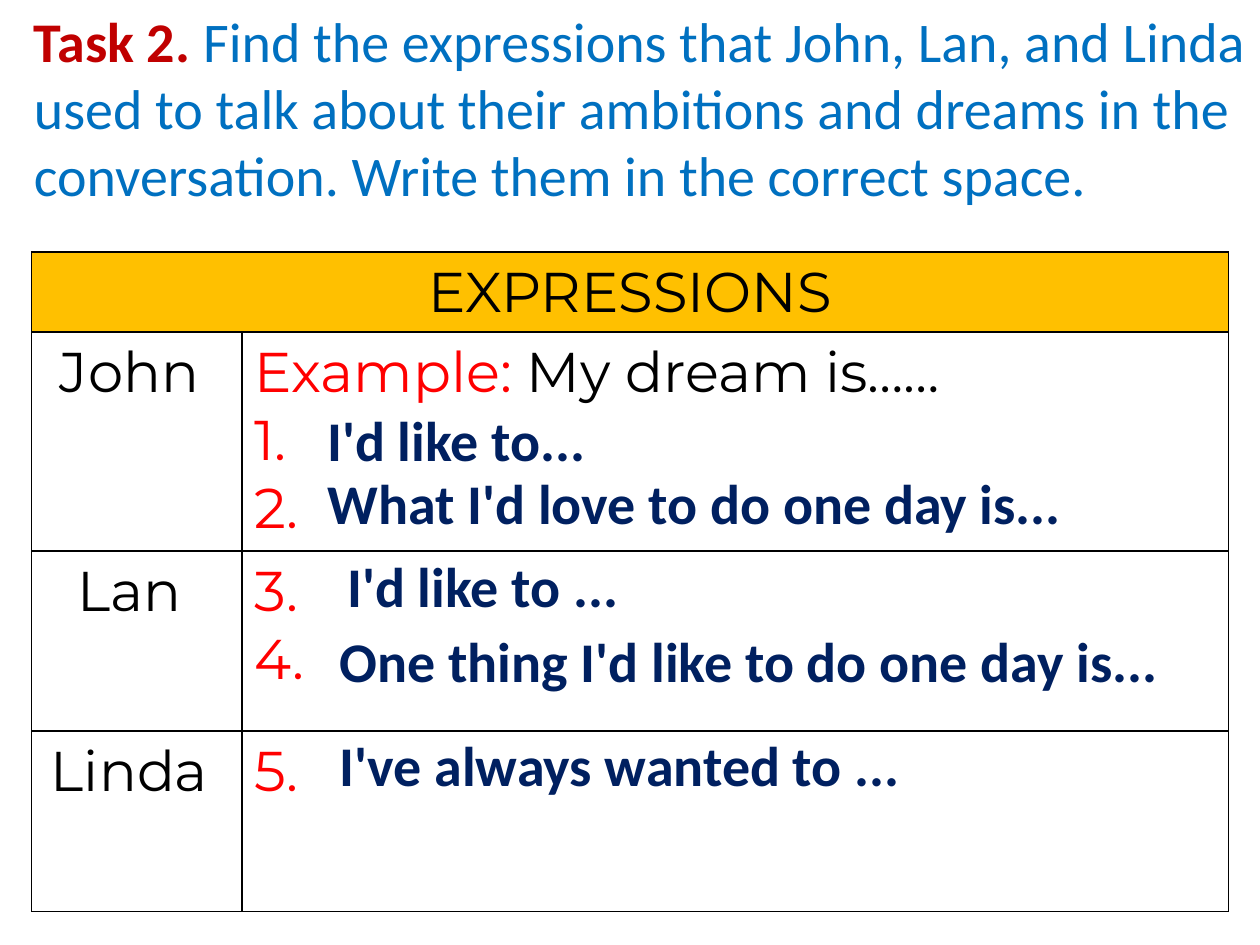
"""Build the Task 2 slide on expressions for ambitions and dreams."""
from typing import NamedTuple

from lxml.etree import SubElement
from pptx import Presentation
from pptx.dml.color import RGBColor as Rgb
from pptx.enum.text import MSO_ANCHOR as Anchor, MSO_AUTO_SIZE as AutoSize, PP_ALIGN as Align
from pptx.oxml.ns import qn
from pptx.util import Cm, Pt

COLORS = {"task": "C00000", "instruction": "0070C0", "header": "FFC000",
          "label": "000000", "number": "FF0000", "answer": "002060"}
FRAME_FORMAT = {"word_wrap": True, "auto_size": AutoSize.SHAPE_TO_FIT_TEXT,
                "vertical_anchor": Anchor.TOP}
BODY_FORMAT = {"size": Pt(32), "name": "Calibri", "bold": False}
STRONG_FORMAT = BODY_FORMAT | {"bold": True}
TABLE_FORMAT = BODY_FORMAT | {"name": "Montserrat"}
COLUMN_WIDTHS = (4.24, 19.89)
ROW_HEIGHTS = (1.6, 4.42, 3.63, 3.63)


class Piece(NamedTuple):
    text: str
    color: str


class Speaker(NamedTuple):
    name: str
    lines: tuple[tuple[Piece, ...], ...]


class Answer(NamedTuple):
    text: str
    left: float
    top: float
    width: float


def numbered(*numbers: int) -> tuple[tuple[Piece, ...], ...]:
    """Return one line for each answer number."""
    return tuple((Piece(f"{number}.", "number"),) for number in numbers)


SPEAKERS = (
    Speaker("John ", ((Piece("Example:", "number"), Piece(" My dream is……", "label")),
                      *numbered(1, 2))),
    Speaker("Lan ", numbered(3, 4)),
    Speaker("Linda ", numbered(5)),
)
ANSWERS = (
    Answer("I'd like to...", 6.35, 8.05, 6.4),
    Answer("What I'd love to do one day is...", 6.35, 9.32, 15.4),
    Answer("I'd like to ...", 6.75, 11, 6.2),
    Answer("One thing I'd like to do one day is...", 6.6, 12.5, 17.4),
    Answer("I've always wanted to ...", 6.6, 14.6, 12),
)


def apply_format(target, values: dict) -> None:
    """Set every format value on the target."""
    for attribute, value in values.items():
        setattr(target, attribute, value)


def write_piece(paragraph, piece: Piece, values: dict) -> None:
    """Add one coloured run to a paragraph."""
    run = paragraph.add_run()
    run.text = piece.text
    apply_format(run.font, values)
    run.font.color.rgb = Rgb.from_string(COLORS[piece.color])


def write_lines(frame, lines, align: Align = Align.LEFT) -> None:
    """Fill a table cell's frame with lines of pieces."""
    for index, line in enumerate(lines):
        paragraph = frame.add_paragraph() if index else frame.paragraphs[0]
        paragraph.alignment = align
        for piece in line:
            write_piece(paragraph, piece, TABLE_FORMAT)


def add_borders(cell) -> None:
    """Rule all four sides of a cell in black."""
    properties = cell._tc.get_or_add_tcPr()
    for index, side in enumerate(("lnL", "lnR", "lnT", "lnB")):
        border = SubElement(properties, qn(f"a:{side}"), w=str(Pt(1)))
        fill = SubElement(border, qn("a:solidFill"))
        SubElement(fill, qn("a:srgbClr"), val=COLORS["label"])
        properties.insert(index, border)


def write_task(title) -> None:
    """Place and fill the slide title."""
    apply_format(title, {"left": Cm(0.43), "top": Cm(0), "width": Cm(24.97), "height": Cm(4.37)})
    apply_format(title.text_frame, FRAME_FORMAT)
    paragraph = title.text_frame.paragraphs[0]
    paragraph.alignment = Align.LEFT
    write_piece(paragraph, Piece("Task 2. ", "task"), STRONG_FORMAT)
    instruction = ("Find the expressions that John, Lan, and Linda used to talk about their "
                   "ambitions and dreams in the conversation. Write them in the correct space.")
    write_piece(paragraph, Piece(instruction, "instruction"), BODY_FORMAT)


def add_expressions(slide) -> None:
    """Draw the table of speakers and their expressions."""
    expressions = slide.shapes.add_table(
        len(ROW_HEIGHTS), len(COLUMN_WIDTHS), Cm(0.64), Cm(5.08),
        Cm(sum(COLUMN_WIDTHS)), Cm(sum(ROW_HEIGHTS))).table
    apply_format(expressions, {"first_row": False, "horz_banding": False})
    for column, width in zip(expressions.columns, COLUMN_WIDTHS):
        column.width = Cm(width)
    for row, height in zip(expressions.rows, ROW_HEIGHTS):
        row.height = Cm(height)
    for cell in expressions.iter_cells():
        cell.fill.background()
        add_borders(cell)
    header = expressions.cell(0, 0)
    header.merge(expressions.cell(0, 1))
    header.fill.solid()
    header.fill.fore_color.rgb = Rgb.from_string(COLORS["header"])
    write_lines(header.text_frame, ((Piece("EXPRESSIONS", "label"),),), Align.CENTER)
    for row, speaker in enumerate(SPEAKERS, start=1):
        name_line = (Piece(speaker.name, "label"),)
        write_lines(expressions.cell(row, 0).text_frame, (name_line,), Align.CENTER)
        write_lines(expressions.cell(row, 1).text_frame, speaker.lines)


def add_answer(slide, answer: Answer) -> None:
    """Place one answer over its numbered line."""
    frame = slide.shapes.add_textbox(
        Cm(answer.left), Cm(answer.top), Cm(answer.width), Cm(1.62)).text_frame
    apply_format(frame, FRAME_FORMAT)
    write_piece(frame.paragraphs[0], Piece(answer.text, "answer"), STRONG_FORMAT)


def main() -> None:
    """Assemble and save the slide."""
    deck = Presentation()
    apply_format(deck, {"slide_width": Cm(25.4), "slide_height": Cm(19.05)})
    slide = deck.slides.add_slide(deck.slide_layouts.get_by_name("Title Only"))
    write_task(slide.shapes.title)
    add_expressions(slide)
    for answer in ANSWERS:
        add_answer(slide, answer)
    deck.save("out.pptx")


if __name__ == "__main__":
    main()
